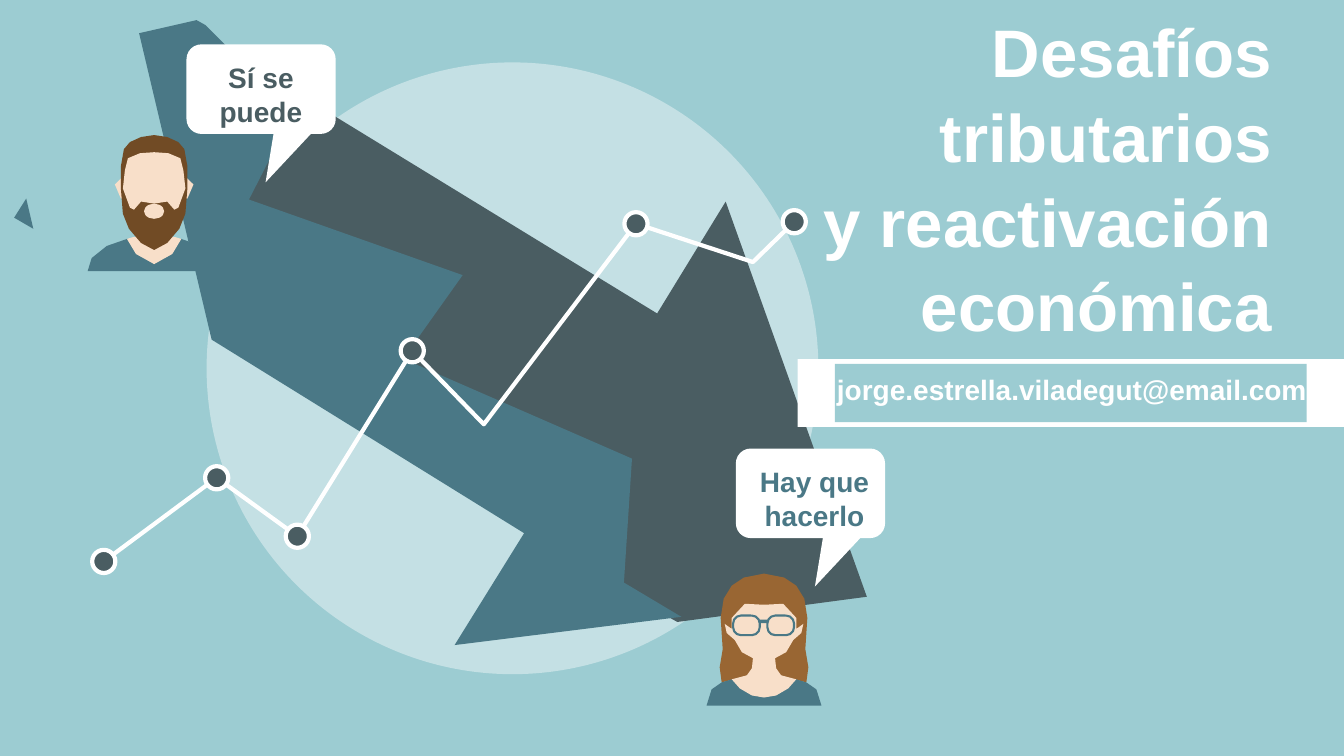
from pptx import Presentation
from pptx.dml.color import RGBColor
from pptx.enum import shapes, text
from pptx.util import Pt

AQUA = RGBColor(0x9C, 0xCC, 0xD2)
PALE_AQUA = RGBColor(0xC4, 0xE0, 0xE4)
SLATE = RGBColor(0x4A, 0x5D, 0x62)
TEAL = RGBColor(0x4A, 0x78, 0x86)
WHITE = RGBColor(0xFF, 0xFF, 0xFF)
SKIN = RGBColor(0xF8, 0xDF, 0xC9)
AUBURN = RGBColor(0x99, 0x66, 0x33)
BROWN = RGBColor(0x71, 0x4B, 0x25)
FONT = "Arial"
UNIT = 0.72

ARROW_EDGE = [(247, 178), (459, 253), (400, 336), (627, 435), (619, 558)]
DARK_TIP = [(672, 597), (860, 572), (720, 180), (652, 291), (196, 12), (284, 99)]
TEAL_TIP = [(676, 592), (451, 620), (520, 509), (210, 317), (138, 13), (195, 0),
            (204, 5), (291, 92)]
FRAGMENT = [(26, 177), (33, 207), (14, 196)]
TREND = [(3, 357), (115, 274), (195, 332), (309, 148), (380, 221), (531, 22),
         (647, 60), (688, 20)]
BENDS = [(380, 221), (647, 60)]

WOMAN_AXIS = 57
WOMAN_HALVES = [
    (AUBURN, [(57, 0), (37, 4), (25, 12), (17, 25), (14, 44), (16, 75), (13, 93),
              (15, 108), (41, 101)]),
    (TEAL, [(57, 131), (0, 131), (5, 115), (15, 108), (25, 105)]),
    (SKIN, [(57, 31), (38, 30), (25, 44), (25, 55), (18, 50), (20, 59), (28, 66), (35, 78),
            (46, 84), (45, 94), (40, 101), (25, 105), (33, 114), (45, 121), (57, 123)]),
]
MAN_AXIS = 66
MAN_HALVES = [
    (TEAL, [(66, 135), (0, 135), (4, 122), (19, 110), (39, 103)]),
    (SKIN, [(66, 128), (48, 118), (39, 103), (46, 101)]),
    (SKIN, [(33, 43), (27, 49), (33, 63)]),
    (BROWN, [(66, 0), (53, 2), (42, 7), (36, 14), (33, 31), (33, 53), (35, 78), (41, 93),
             (53, 107), (66, 114)]),
    (SKIN, [(66, 17), (52, 18), (40, 23), (37, 35), (35, 53), (42, 72), (46, 74), (53, 66),
            (66, 68)]),
]


def paint(shape, fill=None, line=None, weight=3):
    shape.shadow.inherit = False
    if fill is None:
        shape.fill.background()
    else:
        shape.fill.solid()
        shape.fill.fore_color.rgb = fill
    if line is None:
        shape.line.fill.background()
    else:
        shape.line.color.rgb = line
        shape.line.width = Pt(weight)


def add_outline(slide, left, top, points, fill=None, line=None, close=True):
    builder = slide.shapes.build_freeform(*points[0], scale=Pt(UNIT))
    builder.add_line_segments(points[1:], close=close)
    paint(builder.convert_to_shape(Pt(left), Pt(top)), fill, line)


def add_preset(slide, kind, left, top, width, height, fill=None, line=None, weight=3):
    shape = slide.shapes.add_shape(kind, Pt(left), Pt(top), Pt(width), Pt(height))
    paint(shape, fill, line, weight)
    return shape


def write(shape, lines, size, color, alignment, spacing=None):
    frame = shape.text_frame
    frame.word_wrap = True
    frame.auto_size = text.MSO_AUTO_SIZE.NONE
    for index, line in enumerate(lines):
        paragraph = frame.add_paragraph() if index else frame.paragraphs[0]
        paragraph.alignment = alignment
        paragraph.space_before = Pt(0)
        paragraph.line_spacing = spacing
        run = paragraph.add_run()
        run.text = line
        run.font.name = FONT
        run.font.size = Pt(size)
        run.font.bold = True
        run.font.color.rgb = color


def add_label(slide, left, top, width, height, words, color):
    label = slide.shapes.add_textbox(Pt(left), Pt(top), Pt(width), Pt(height))
    write(label, [words], 20, color, text.PP_ALIGN.CENTER)


def add_title(slide, left, top, width, height):
    title = slide.shapes.title
    title.left, title.top, title.width, title.height = Pt(left), Pt(top), Pt(width), Pt(height)
    title.text_frame.vertical_anchor = text.MSO_ANCHOR.MIDDLE
    write(title, ["Desafíos tributarios", "y reactivación económica"], 48, WHITE,
          text.PP_ALIGN.RIGHT, 1.05)


def add_arrows(slide, left, top):
    add_preset(slide, shapes.MSO_SHAPE.OVAL, left + 147.6, top + 30.2, 437, 437, PALE_AQUA)
    dark_edge = [(x - 6, y + 6) for x, y in ARROW_EDGE]
    add_outline(slide, left, top, dark_edge + DARK_TIP, SLATE)
    add_outline(slide, left, top, ARROW_EDGE + TEAL_TIP, TEAL)
    add_outline(slide, left, top, FRAGMENT, TEAL)


def add_trend(slide, left, top):
    diameter = 16.56
    add_outline(slide, left, top, TREND, line=WHITE, close=False)
    for x, y in TREND:
        if (x, y) not in BENDS:
            add_preset(slide, shapes.MSO_SHAPE.OVAL, left + x * UNIT - diameter / 2,
                       top + y * UNIT - diameter / 2, diameter, diameter, SLATE, WHITE)


def add_person(slide, left, top, halves, axis):
    for color, half in halves:
        mirrored = [(2 * axis - x, y) for x, y in reversed(half)]
        add_outline(slide, left, top, half + mirrored, color)


def add_woman(slide, left, top):
    add_person(slide, left, top, WOMAN_HALVES, WOMAN_AXIS)
    for lens in (19, 43.5):
        frame = add_preset(slide, shapes.MSO_SHAPE.ROUNDED_RECTANGLE, left + lens, top + 30,
                           19, 14, line=TEAL, weight=1.5)
        frame.adjustments[0] = 0.4
    add_preset(slide, shapes.MSO_SHAPE.RECTANGLE, left + 38, top + 33, 5.5, 2.5, TEAL)


def add_man(slide, left, top):
    add_person(slide, left, top, MAN_HALVES, MAN_AXIS)
    add_preset(slide, shapes.MSO_SHAPE.OVAL, left + 40.3, top + 49, 14.4, 10.8, SKIN)


def add_bubble(slide, left, top, words, color, indent):
    bubble = add_preset(slide, shapes.MSO_SHAPE.ROUNDED_RECTANGULAR_CALLOUT, left, top,
                        106.6, 64, WHITE)
    bubble.adjustments[0] = 0.03
    bubble.adjustments[1] = 1.04
    add_label(slide, left + indent, top + 8.2, 96.5, 55.4, words, color)


def add_contact(slide, left, top, width, height):
    band = shapes.MSO_SHAPE.RECTANGLE
    add_preset(slide, band, left, top, width, height, WHITE)
    add_preset(slide, band, left + 26.6, top + 3.4, 337, height - 6.8, AQUA)
    add_label(slide, left + 7, top + 6.2, 378, 31.7, "jorge.estrella.viladegut@email.com", WHITE)


def main():
    presentation = Presentation()
    presentation.slide_width, presentation.slide_height = Pt(960), Pt(540)
    slide = presentation.slides.add_slide(presentation.slide_layouts[5])
    slide.background.fill.solid()
    slide.background.fill.fore_color.rgb = AQUA
    add_title(slide, 504, 5.8, 411.8, 239.8)
    add_arrows(slide, 0, 14.4)
    add_trend(slide, 72, 144)
    add_woman(slide, 504.7, 409.7)
    add_man(slide, 62.6, 96.5)
    add_bubble(slide, 525.6, 320.4, "Hay que hacerlo", TEAL, 8)
    add_bubble(slide, 133.2, 31.7, "Sí se puede", SLATE, 5)
    add_contact(slide, 569.7, 256.5, 390.3, 48.4)
    presentation.save("out.pptx")


if __name__ == "__main__":
    main()
